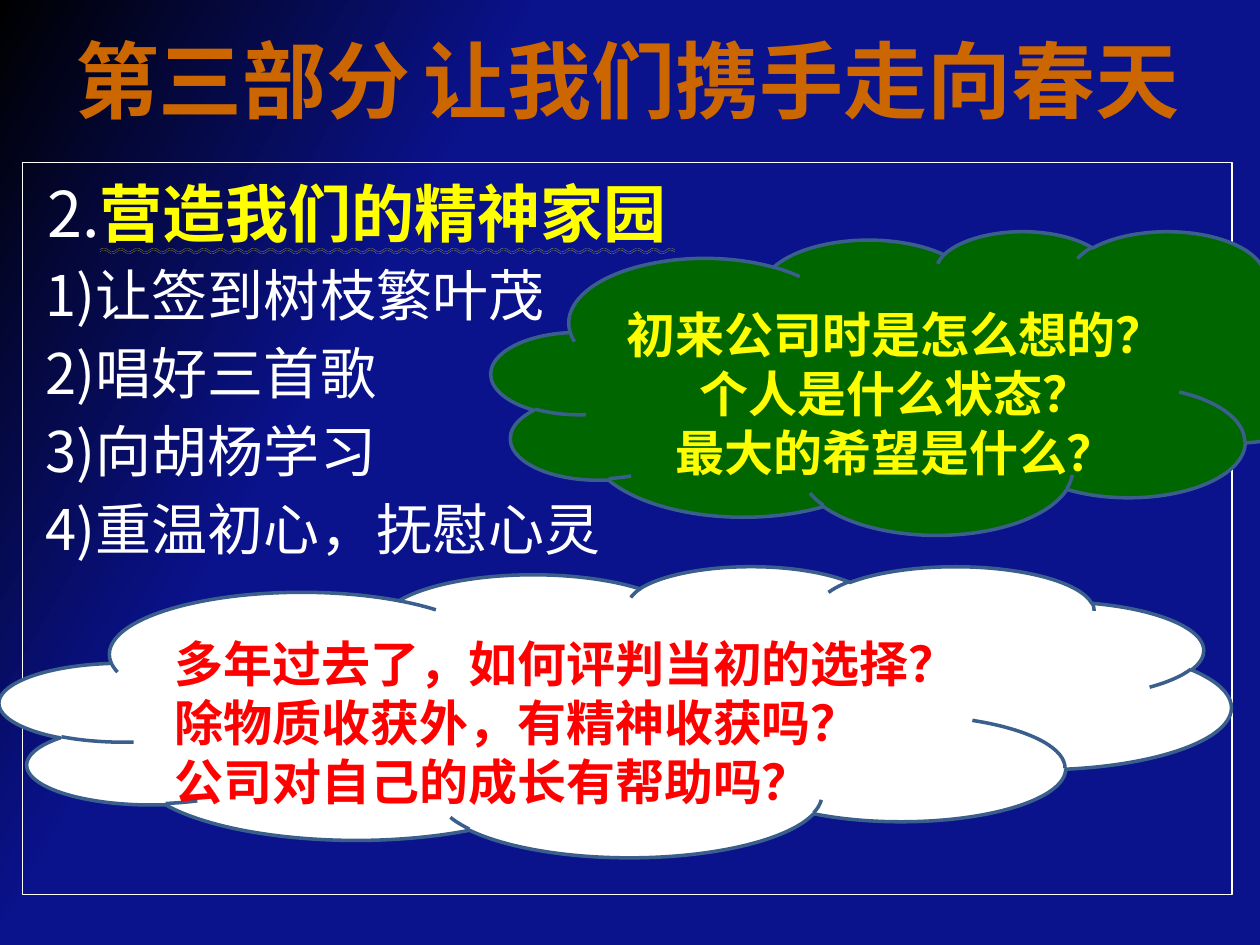
"""Build the slide on walking hand in hand towards spring."""
from lxml.etree import SubElement
from pptx import Presentation
from pptx.dml.color import RGBColor
from pptx.enum.shapes import MSO_SHAPE
from pptx.enum.text import MSO_ANCHOR, MSO_AUTO_SIZE, MSO_UNDERLINE, PP_ALIGN
from pptx.oxml.ns import qn
from pptx.util import Pt

THEME = {
    "font": "Noto Sans CJK SC", "alt": "Noto Sans CJK JP",
    "title": 48, "gap": 32, "head": 36, "item": 32, "cloud": 28,
    "black": "000000", "navy": "0A128C", "orange": "CC6600", "white": "FFFFFF",
    "yellow": "FFFF00", "green": "006600", "red": "FF0000", "edge": "3A5F8C",
}
TITLE = [("第三部分", "title", "orange"), (" ", "gap", "black"),
         ("让我们携手走向春天", "title", "orange")]
HEAD = [(" 2.", "white", False), ("营造我们的精神家园", "yellow", True)]
ITEMS = ["让签到树枝繁叶茂", "唱好三首歌", "向胡杨学习", "重温初心，抚慰心灵"]
CLOUDS = [
    {"box": (280.8, 131.8, 497.5, 173.5), "fill": "green", "ink": "yellow",
     "font": "font", "align": PP_ALIGN.CENTER,
     "lines": ["初来公司时是怎么想的？", "个人是什么状态？", "最大的希望是什么？"]},
    {"box": (0, 323.3, 703.4, 166.3), "fill": "white", "ink": "red",
     "font": "alt", "align": PP_ALIGN.LEFT,
     "lines": ["多年过去了，如何评判当初的选择？", "除物质收获外，有精神收获吗？",
               "公司对自己的成长有帮助吗？"]},
]
LEADING = 1.2


def color(name):
    return RGBColor.from_string(THEME[name])


def place(shape, box):
    shape.left, shape.top, shape.width, shape.height = map(Pt, box)


def inset(frame, left, top, right, bottom):
    frame.margin_left, frame.margin_top = Pt(left), Pt(top)
    frame.margin_right, frame.margin_bottom = Pt(right), Pt(bottom)
    frame.word_wrap, frame.auto_size = True, MSO_AUTO_SIZE.NONE


def write(para, text, size, ink, bold=False, face="font"):
    run = para.add_run()
    run.text = text
    font = run.font
    font.size, font.bold, font.name = Pt(THEME[size]), bold, THEME[face]
    font.color.rgb = color(ink)
    SubElement(font._element, qn("a:ea")).set("typeface", THEME[face])
    return font


def rows(frame, count):
    return [frame.paragraphs[0]] + [frame.add_paragraph() for _ in range(count - 1)]


def outline(shape, ink, width):
    shape.line.color.rgb = color(ink)
    shape.line.width = Pt(width)


def add_title(shape):
    place(shape, (13, 0, 691, 90))
    frame = shape.text_frame
    frame.vertical_anchor = MSO_ANCHOR.MIDDLE
    frame.auto_size = MSO_AUTO_SIZE.NONE
    para = frame.paragraphs[0]
    para.alignment = PP_ALIGN.CENTER
    for text, size, ink in TITLE:
        write(para, text, size, ink, bold=True)


def add_body(shape):
    place(shape, (13, 92.9, 691, 418.3))
    outline(shape, "white", 0.75)
    frame = shape.text_frame
    inset(frame, 6, 7, 6, 3)
    paras = rows(frame, len(ITEMS) + 1)
    for i, para in enumerate(paras):
        props = para._p.get_or_add_pPr()
        props.set("marL", str(Pt(35)))
        props.set("indent", str(Pt(-35)))
        SubElement(props, qn("a:buNone"))
        para.space_before = Pt(6 if i else 0)
        para.line_spacing = Pt(THEME["item" if i else "head"] * LEADING)
    for text, ink, bold in HEAD:
        font = write(paras[0], text, "head", ink, bold)
        if bold:
            font.underline = MSO_UNDERLINE.WAVY_DOUBLE_LINE
    for i, (para, text) in enumerate(zip(paras[1:], ITEMS), 1):
        write(para, f" {i}){text}", "item", "white")


def add_cloud(slide, data):
    shape = slide.shapes.add_shape(MSO_SHAPE.CLOUD, *map(Pt, data["box"]))
    shape.shadow.inherit = False
    shape.fill.solid()
    shape.fill.fore_color.rgb = color(data["fill"])
    outline(shape, "edge", 2)
    frame = shape.text_frame
    inset(frame, 3, 23, 3, 3)
    frame.vertical_anchor = MSO_ANCHOR.MIDDLE
    for para, text in zip(rows(frame, len(data["lines"])), data["lines"]):
        para.alignment = data["align"]
        para.line_spacing = Pt(THEME["cloud"] * LEADING)
        write(para, text, "cloud", data["ink"], True, data["font"])


def main():
    deck = Presentation()
    deck.slide_width, deck.slide_height = Pt(720), Pt(540)
    slide = deck.slides.add_slide(deck.slide_layouts[1])
    fill = slide.background.fill
    fill.gradient()
    fill.gradient_angle = 330
    for stop, spot, name in zip(fill.gradient_stops, (0, 0.3), ("black", "navy")):
        stop.position = spot
        stop.color.rgb = color(name)
    add_title(slide.shapes.title)
    add_body(slide.placeholders[1])
    for data in CLOUDS:
        add_cloud(slide, data)
    deck.save("out.pptx")


if __name__ == "__main__":
    main()
